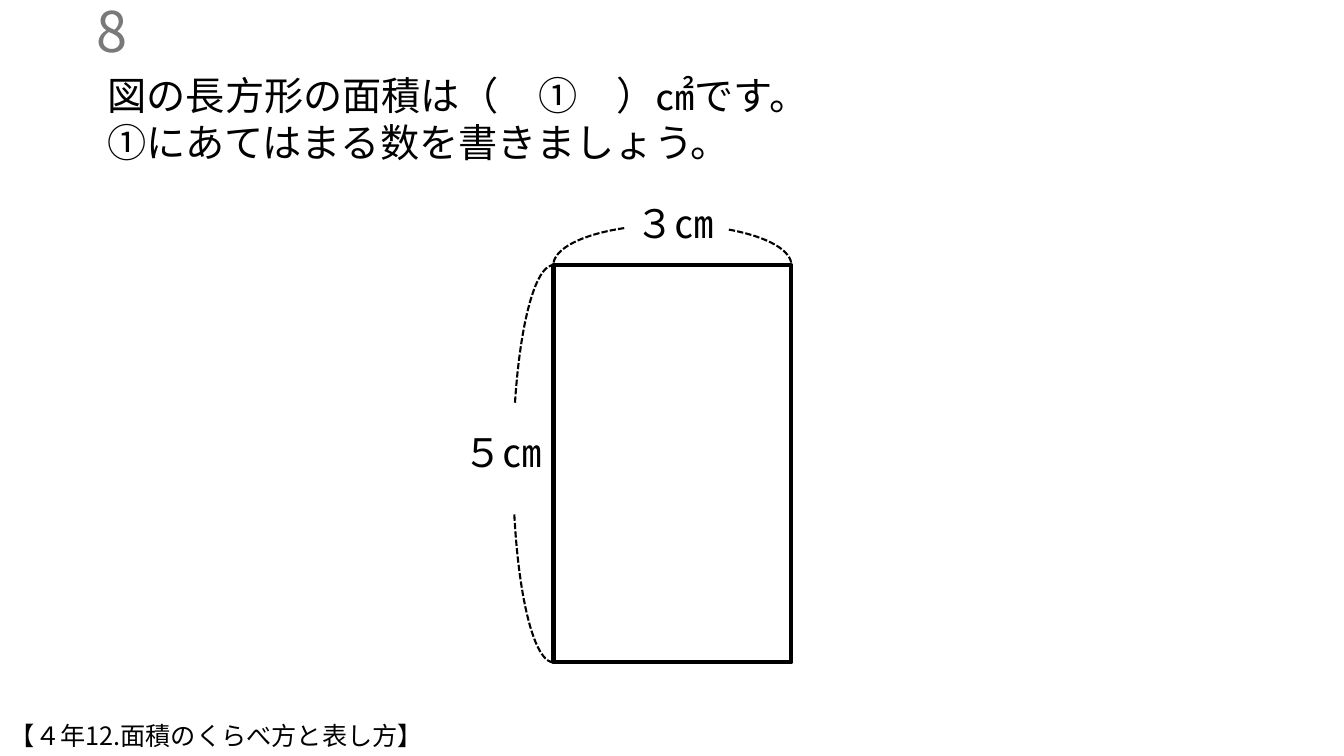
from dataclasses import dataclass
from lxml import etree
from pptx import Presentation
from pptx import util as u
from pptx.dml.color import RGBColor
from pptx.enum import dml, shapes, text
from pptx.oxml.ns import qn


@dataclass(frozen=True)
class Theme:
    """Colours, font and type sizes of the worksheet."""
    font: str = "Noto Sans CJK JP"
    ink: str = "000000"
    grey: str = "797979"
    number: int = 40
    body: int = 28
    footer: int = 18
    leading: float = 1.2


THEME = Theme()


def points(*lengths):
    """Turn plain numbers into point lengths."""
    return [u.Pt(length) for length in lengths]


def write(shape, lines, size, color=THEME.ink, align=text.PP_ALIGN.LEFT,
          anchor=text.MSO_ANCHOR.TOP):
    """Fill a shape with one paragraph per line in the sheet's type."""
    frame = shape.text_frame
    frame.text = "\n".join(lines)
    frame_format = {"word_wrap": True, "auto_size": text.MSO_AUTO_SIZE.NONE,
                    "vertical_anchor": anchor}
    for name, value in frame_format.items():
        setattr(frame, name, value)
    para_format = {"alignment": align, "line_spacing": u.Pt(size * THEME.leading),
                   "space_before": u.Pt(0)}
    for para in frame.paragraphs:
        for name, value in para_format.items():
            setattr(para, name, value)
        for span in para.runs:
            span.font.color.rgb = RGBColor.from_string(color)
            for name, value in {"name": THEME.font, "size": u.Pt(size)}.items():
                setattr(span.font, name, value)
            east_asian = etree.SubElement(span.font._element, qn("a:ea"))
            east_asian.set("typeface", THEME.font)


def add_text(page, box, lines, size):
    """Add a text box at the given place."""
    write(page.shapes.add_textbox(*points(*box)), lines, size)


def outline(shape, width):
    """Leave a shape unfilled with a plain black line."""
    shape.shadow.inherit = False
    shape.fill.background()
    shape.line.color.rgb = RGBColor.from_string(THEME.ink)
    shape.line.width = u.Pt(width)


def add_number(page, box):
    """Place the question number in the title placeholder."""
    title = page.shapes.title
    for name, value in zip(("left", "top", "width", "height"), points(*box)):
        setattr(title, name, value)
    write(title, ["8"], THEME.number, THEME.grey, text.PP_ALIGN.RIGHT,
          text.MSO_ANCHOR.MIDDLE)


def add_brace(page, box, rotation=0):
    """Draw a dashed span mark as a mirrored pair of arcs."""
    left, top, width, height = box
    group = page.shapes.add_group_shape()
    for mirrored, start, trim in ((False, 196.71, 0), (True, 193, 2)):
        arc = group.shapes.add_shape(
            shapes.MSO_SHAPE.ARC, *points(left, top, width - trim, height))
        arc.adjustments[0] = start
        arc.adjustments[1] = 0
        outline(arc, 1.5)
        arc.line.dash_style = dml.MSO_LINE.SQUARE_DOT
        if mirrored:
            arc._element.spPr.xfrm.set("flipH", "1")
    group.rotation = rotation


def add_rectangle_figure(page, box):
    """Draw the rectangle with its width and height marked."""
    left, top, width, height = box
    depth = 57.6
    outline(page.shapes.add_shape(shapes.MSO_SHAPE.RECTANGLE, *points(*box)), 3)
    add_brace(page, (left, top - depth / 2, width, depth))
    add_brace(page, (left - height / 2, top + (height - depth) / 2, height, depth), 270)
    label_width, label_height = 85, 41
    add_text(page, (left + 51.8, top - 50.4, label_width, label_height),
             ["３㎝"], THEME.body)
    add_text(page, (left - 71.3, top + 113, label_width, label_height),
             ["５㎝"], THEME.body)


def build():
    """Build and save the worksheet slide."""
    deck = Presentation()
    deck.slide_width, deck.slide_height = points(960, 540)
    page = deck.slides.add_slide(deck.slide_layouts[5])
    add_text(page, (69.8, 47.5, 629.3, 74.9),
             ["図の長方形の面積は（　①　）㎠です。", "①にあてはまる数を書きましょう。"],
             THEME.body)
    add_number(page, (-117.4, 7.2, 216, 28.8))
    add_rectangle_figure(page, (395.3, 189.4, 170, 283.7))
    add_text(page, (0, 511.2, 539.3, 28.8), ["【４年12.面積のくらべ方と表し方】"],
             THEME.footer)


    deck.save("out.pptx")


if __name__ == "__main__":
    build()
